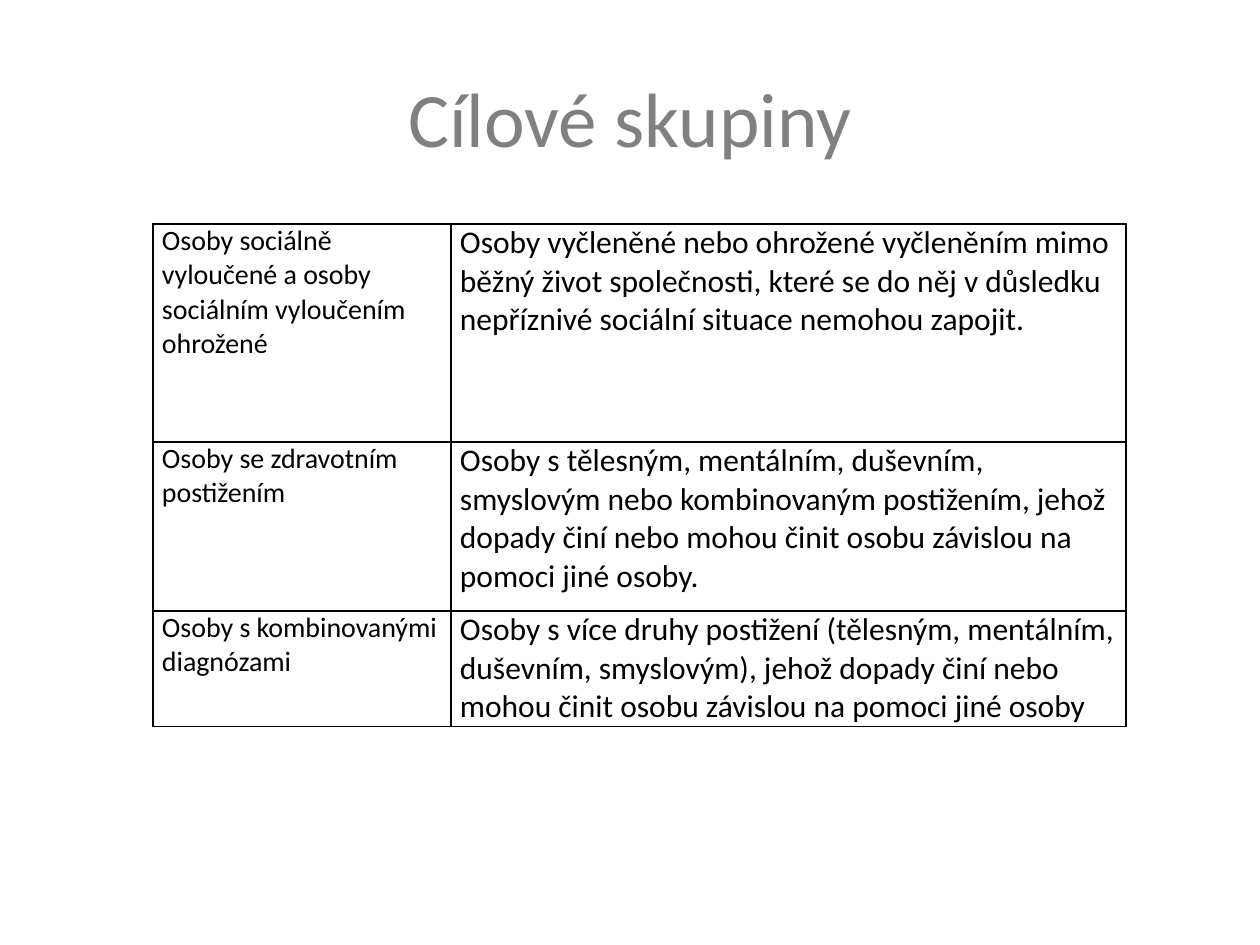
from pptx import Presentation
from pptx.dml.color import RGBColor
from pptx.enum.text import MSO_ANCHOR as Anchor, PP_ALIGN as Align
from pptx.oxml import parse_xml
from pptx.oxml.ns import nsdecls

PX = 914400 // 126
FONT = "Calibri"
BLACK = "000000"
GREY = "808080"


def color(value):
    return RGBColor.from_string(value)


def add_border(cell, side):
    cell._tc.get_or_add_tcPr().append(parse_xml(
        f'<a:{side} {nsdecls("a")} w="12700"><a:solidFill>'
        f'<a:srgbClr val="{BLACK}"/></a:solidFill></a:{side}>'))


groups = [
    ("Osoby sociálně vyloučené a osoby sociálním vyloučením ohrožené",
     "Osoby vyčleněné nebo ohrožené vyčleněním mimo běžný život společnosti, "
     "které se do něj v důsledku nepříznivé sociální situace nemohou zapojit."),
    ("Osoby se zdravotním postižením",
     "Osoby s tělesným, mentálním, duševním, smyslovým nebo kombinovaným postižením, "
     "jehož dopady činí nebo mohou činit osobu závislou na pomoci jiné osoby."),
    ("Osoby s kombinovanými diagnózami",
     "Osoby s více druhy postižení (tělesným, mentálním, duševním, smyslovým), "
     "jehož dopady činí nebo mohou činit osobu závislou na pomoci jiné osoby"),
]
column_widths = [298, 675]
row_heights = [218, 169, 115]
font_sizes = [16, 18]

presentation = Presentation()
presentation.slide_width = 1260 * PX
presentation.slide_height = 945 * PX
slide = presentation.slides.add_slide(presentation.slide_layouts[5])

title = slide.shapes.title
title.left, title.top, title.width, title.height = 63 * PX, 38 * PX, 1134 * PX, 158 * PX
title.text_frame.text = "Cílové skupiny"
title.text_frame.vertical_anchor = Anchor.MIDDLE
paragraph = title.text_frame.paragraphs[0]
paragraph.alignment = Align.CENTER
paragraph.font.size = 44 * 12700
paragraph.font.name = FONT
paragraph.font.color.rgb = color(GREY)

table = slide.shapes.add_table(
    len(groups), 2, 153 * PX, 224 * PX,
    sum(column_widths) * PX, sum(row_heights) * PX).table
table.first_row = False
table.horz_banding = False
for column, width in zip(table.columns, column_widths):
    column.width = width * PX
for row, height, texts in zip(table.rows, row_heights, groups):
    row.height = height * PX
    for cell, text, size in zip(row.cells, texts, font_sizes):
        cell.text = text
        cell.margin_left = cell.margin_right = 9 * PX
        cell.margin_top = cell.margin_bottom = 0
        cell.vertical_anchor = Anchor.TOP
        for side in ("lnL", "lnR", "lnT", "lnB"):
            add_border(cell, side)
        cell.fill.background()
        paragraph = cell.text_frame.paragraphs[0]
        paragraph.font.size = size * 12700
        paragraph.font.name = FONT
        paragraph.font.bold = False
        paragraph.font.color.rgb = color(BLACK)

presentation.save("out.pptx")
